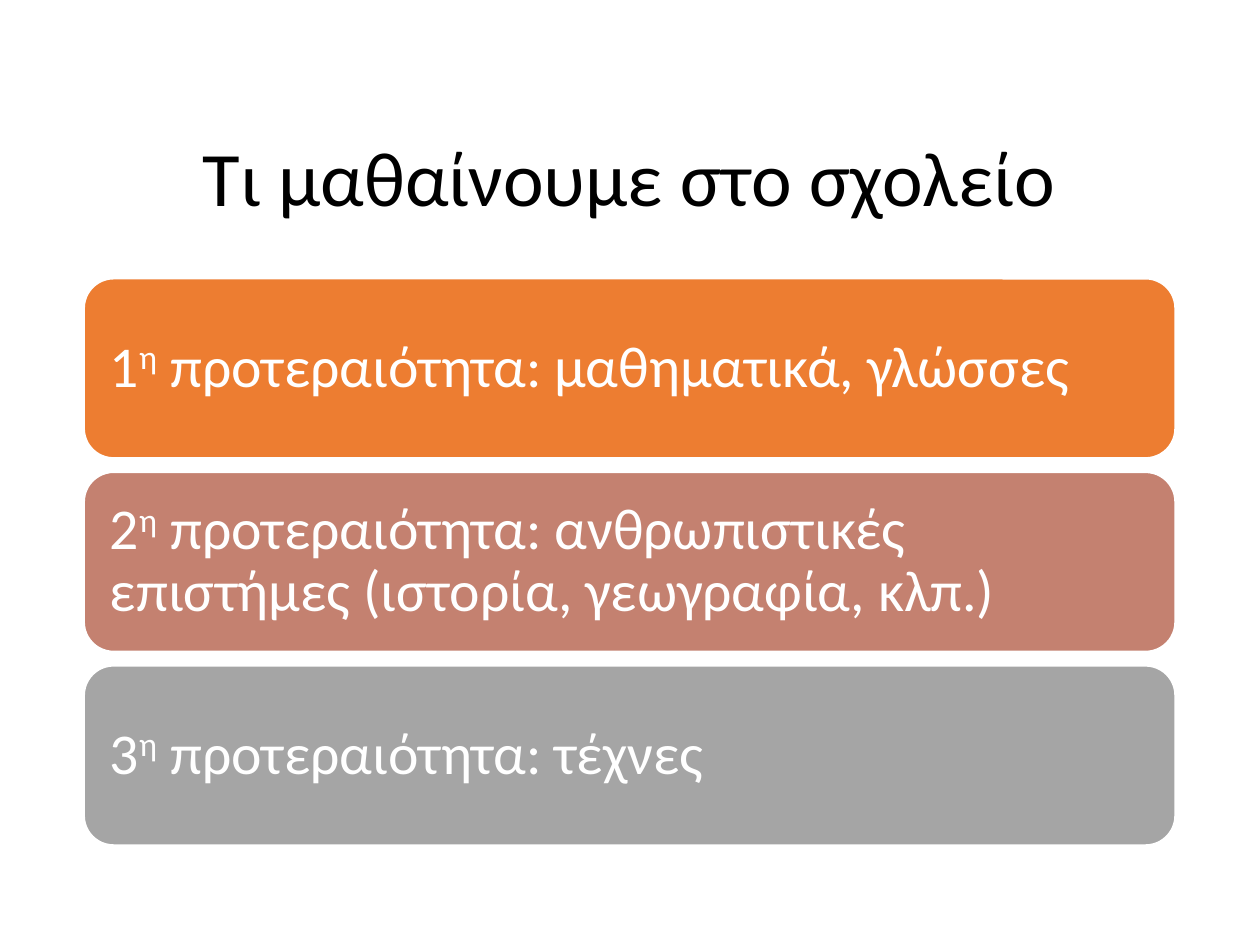
from dataclasses import dataclass

from pptx import Presentation
from pptx.dml.color import RGBColor
from pptx.enum import shapes, text
from pptx.util import Pt


@dataclass(frozen=True)
class Theme:
    font: str = "Calibri"
    title_size: int = 44
    card_size: int = 33
    ink: str = "000000"
    paper: str = "FFFFFF"
    priorities: tuple = ("ED7D31", "C48170", "A5A5A5")


class Deck:
    """Holds the style and the current slide."""

    def __init__(self, slide, theme):
        self.slide = slide
        self.theme = theme

    def style(self, paragraph, size, color, align):
        paragraph.alignment = align
        paragraph.line_spacing = 0.9
        paragraph.font.name = self.theme.font
        paragraph.font.size = Pt(size)
        paragraph.font.color.rgb = RGBColor.from_string(color)

    def title(self, wording, left, top, width, height):
        heading = self.slide.shapes.title
        heading.left, heading.top = Pt(left), Pt(top)
        heading.width, heading.height = Pt(width), Pt(height)
        frame = heading.text_frame
        frame.text = wording
        frame.vertical_anchor = text.MSO_ANCHOR.MIDDLE
        self.style(frame.paragraphs[0], self.theme.title_size,
                   self.theme.ink, text.PP_ALIGN.CENTER)

    def card(self, number, subjects, fill, left, top, width, height):
        card = self.slide.shapes.add_shape(
            shapes.MSO_SHAPE.ROUNDED_RECTANGLE,
            Pt(left), Pt(top), Pt(width), Pt(height))
        card.shadow.inherit = False
        card.fill.solid()
        card.fill.fore_color.rgb = RGBColor.from_string(fill)
        card.line.color.rgb = RGBColor.from_string(self.theme.paper)
        card.line.width = Pt(1.5)

        frame = card.text_frame
        frame.word_wrap = True
        frame.vertical_anchor = text.MSO_ANCHOR.MIDDLE
        frame.margin_left = frame.margin_right = Pt(10)
        frame.margin_top = frame.margin_bottom = Pt(10)
        priority = frame.paragraphs[0]
        self.style(priority, self.theme.card_size,
                   self.theme.paper, text.PP_ALIGN.LEFT)

        # Ordinal with a raised ending
        priority.add_run().text = str(number)
        ending = priority.add_run()
        ending.text = "η"
        ending._r.get_or_add_rPr().set("baseline", "30000")
        priority.add_run().text = f" προτεραιότητα: {subjects}"


def main():
    presentation = Presentation()
    presentation.slide_width, presentation.slide_height = Pt(720), Pt(540)
    title_only = presentation.slide_layouts[5]
    theme = Theme()
    deck = Deck(presentation.slides.add_slide(title_only), theme)

    # Title
    deck.title("Τι μαθαίνουμε στο σχολείο", 103.7, 62.6, 512, 82.8)

    # Priorities, stacked at an equal pitch
    subjects = (
        "μαθηματικά, γλώσσες",
        "ανθρωπιστικές επιστήμες (ιστορία, γεωγραφία, κλπ.)",
        "τέχνες",
    )
    first_top, pitch = 159, 110.6
    for index, (subject, fill) in enumerate(zip(subjects, theme.priorities)):
        deck.card(index + 1, subject, fill,
                  47.8, first_top + index * pitch, 624, 103)

    presentation.save("out.pptx")


if __name__ == "__main__":
    main()
